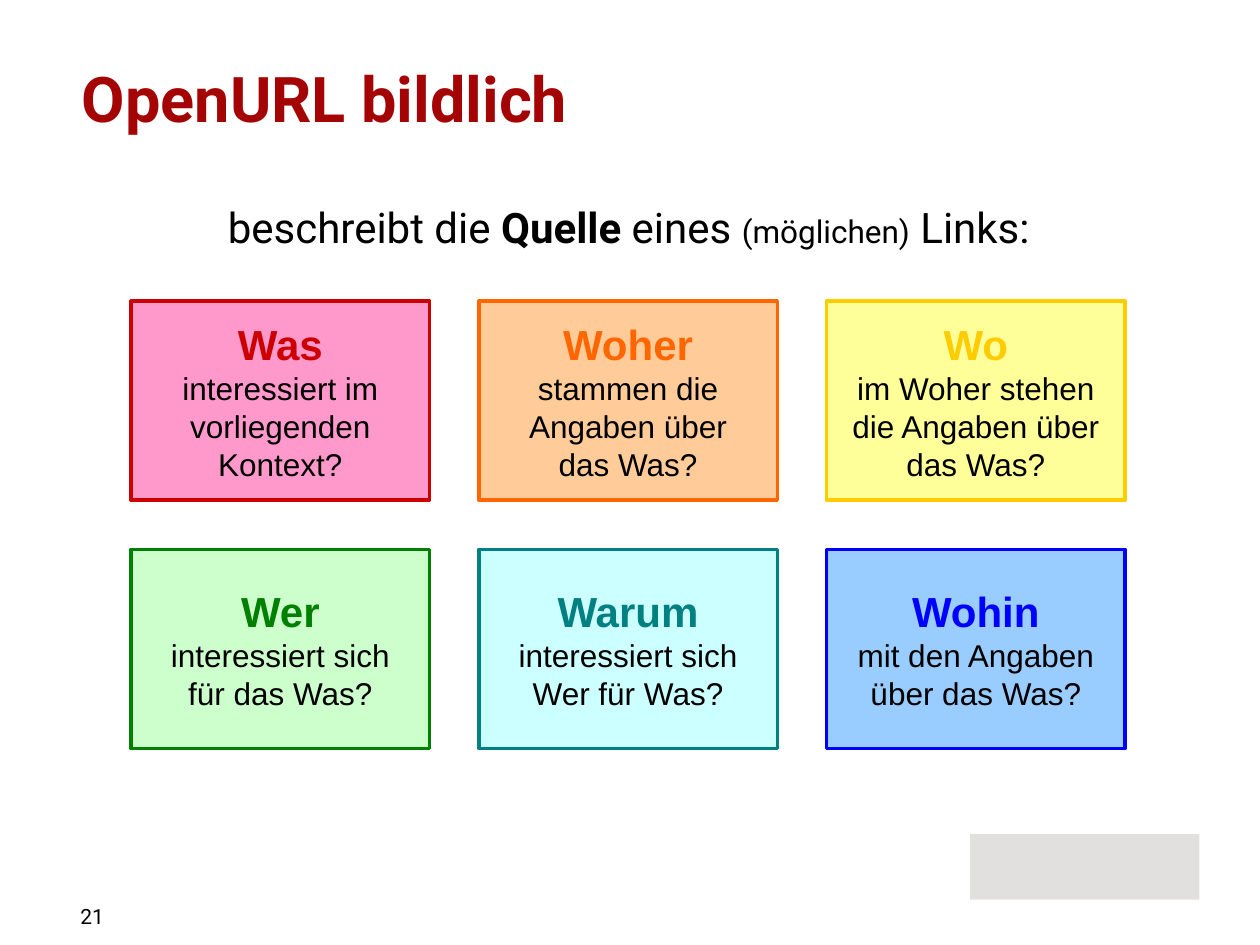
from dataclasses import dataclass

from pptx import Presentation
from pptx import util as u
from pptx.dml.color import RGBColor
from pptx.enum import shapes, text


@dataclass(frozen=True)
class Theme:
    """Colours, fonts and type sizes of the deck."""
    ink: str = "000000"
    heading: str = "A40404"
    panel: str = "E1E0DE"
    sans: str = "Roboto"
    card_font: str = "Arial"
    title_size: int = 36
    lead_size: int = 24
    text_size: int = 18
    number_size: int = 12
    border: int = 2


def write(paragraph, content, *, font, size, color, bold=False):
    """Append one formatted run to a paragraph."""
    run = paragraph.add_run()
    run.text = content
    run.font.name = font
    run.font.size = u.Pt(size)
    run.font.bold = bold
    run.font.color.rgb = RGBColor.from_string(color)


class SlideBuilder:
    """Holds the theme and the current slide."""

    def __init__(self, slide, theme):
        """Keep the slide and its style."""
        self.slide = slide
        self.theme = theme

    def title(self, content, box):
        """Place and fill the title placeholder."""
        heading = self.slide.shapes.title
        heading.left, heading.top, heading.width, heading.height = map(u.Inches, box)
        frame = heading.text_frame
        frame.vertical_anchor = text.MSO_ANCHOR.MIDDLE
        paragraph = frame.paragraphs[0]
        paragraph.alignment = text.PP_ALIGN.LEFT
        write(paragraph, content, font=self.theme.sans, size=self.theme.title_size,
              color=self.theme.heading, bold=True)

    def line(self, pieces, box, align=text.PP_ALIGN.LEFT, anchor=text.MSO_ANCHOR.TOP):
        """Add one line of text from (content, size, bold) pieces."""
        frame = self.slide.shapes.add_textbox(*map(u.Inches, box)).text_frame
        frame.word_wrap = True
        frame.vertical_anchor = anchor
        paragraph = frame.paragraphs[0]
        paragraph.alignment = align
        for content, size, bold in pieces:
            write(paragraph, content, font=self.theme.sans, size=size,
                  color=self.theme.ink, bold=bold)

    def panel(self, box, fill, border=None):
        """Add a plain rectangle, with a border if a colour is given."""
        rect = self.slide.shapes.add_shape(shapes.MSO_SHAPE.RECTANGLE, *map(u.Inches, box))
        rect.shadow.inherit = False
        rect.fill.solid()
        rect.fill.fore_color.rgb = RGBColor.from_string(fill)
        if border:
            rect.line.color.rgb = RGBColor.from_string(border)
            rect.line.width = u.Pt(self.theme.border)
        else:
            rect.line.fill.background()
        return rect

    def card(self, question, details, fill, accent, box):
        """Add a coloured card with a question word above its details."""
        frame = self.panel(box, fill, accent).text_frame
        frame.word_wrap = True
        frame.vertical_anchor = text.MSO_ANCHOR.MIDDLE
        first = frame.paragraphs[0]
        first.alignment = text.PP_ALIGN.CENTER
        write(first, question, font=self.theme.card_font, size=self.theme.lead_size,
              color=accent, bold=True)
        for detail in details:
            paragraph = frame.add_paragraph()
            paragraph.alignment = text.PP_ALIGN.CENTER
            write(paragraph, detail, font=self.theme.card_font,
                  size=self.theme.text_size, color=self.theme.ink)


CARDS = [
    ("Was", ["interessiert im vorliegenden Kontext?"], "FF99CC", "CC0000"),
    ("Woher", ["stammen die Angaben über", "das Was?"], "FFCC99", "FF6600"),
    ("Wo", ["im Woher stehen die Angaben über das Was?"], "FFFF99", "FFCC00"),
    ("Wer", ["interessiert sich", "für das Was?"], "CCFFCC", "008000"),
    ("Warum", ["interessiert sich Wer für Was?"], "CCFFFF", "008080"),
    ("Wohin", ["mit den Angaben über das Was?"], "99CCFF", "0000FF"),
]
COLUMNS = 3
CARD_LEFT, CARD_TOP = 1.04, 2.39
CARD_WIDTH, CARD_HEIGHT = 2.37, 1.58
STEP_X, STEP_Y = 2.76, 1.97


def main():
    """Build and save the slide."""
    deck = Presentation()
    deck.slide_width, deck.slide_height = u.Inches(10), u.Inches(7.5)
    theme = Theme()
    builder = SlideBuilder(deck.slides.add_slide(deck.slide_layouts[5]), theme)

    builder.panel((7.7, 6.62, 1.82, 0.52), theme.panel)
    builder.line([("21", theme.number_size, False)], (0.54, 7.12, 2.05, 0.38))
    builder.title("OpenURL bildlich", (0.55, 0.4, 8.89, 0.74))
    builder.line(
        [
            ("beschreibt die ", theme.lead_size, False),
            ("Quelle", theme.lead_size, True),
            (" eines ", theme.lead_size, False),
            ("(möglichen)", theme.text_size, False),
            (" Links:", theme.lead_size, False),
        ],
        (0.49, 1.55, 9, 0.5),
        align=text.PP_ALIGN.CENTER,
        anchor=text.MSO_ANCHOR.BOTTOM,
    )
    for index, card in enumerate(CARDS):
        row, column = divmod(index, COLUMNS)
        builder.card(*card, (CARD_LEFT + column * STEP_X, CARD_TOP + row * STEP_Y,
                             CARD_WIDTH, CARD_HEIGHT))
    deck.save("out.pptx")


if __name__ == "__main__":
    main()
